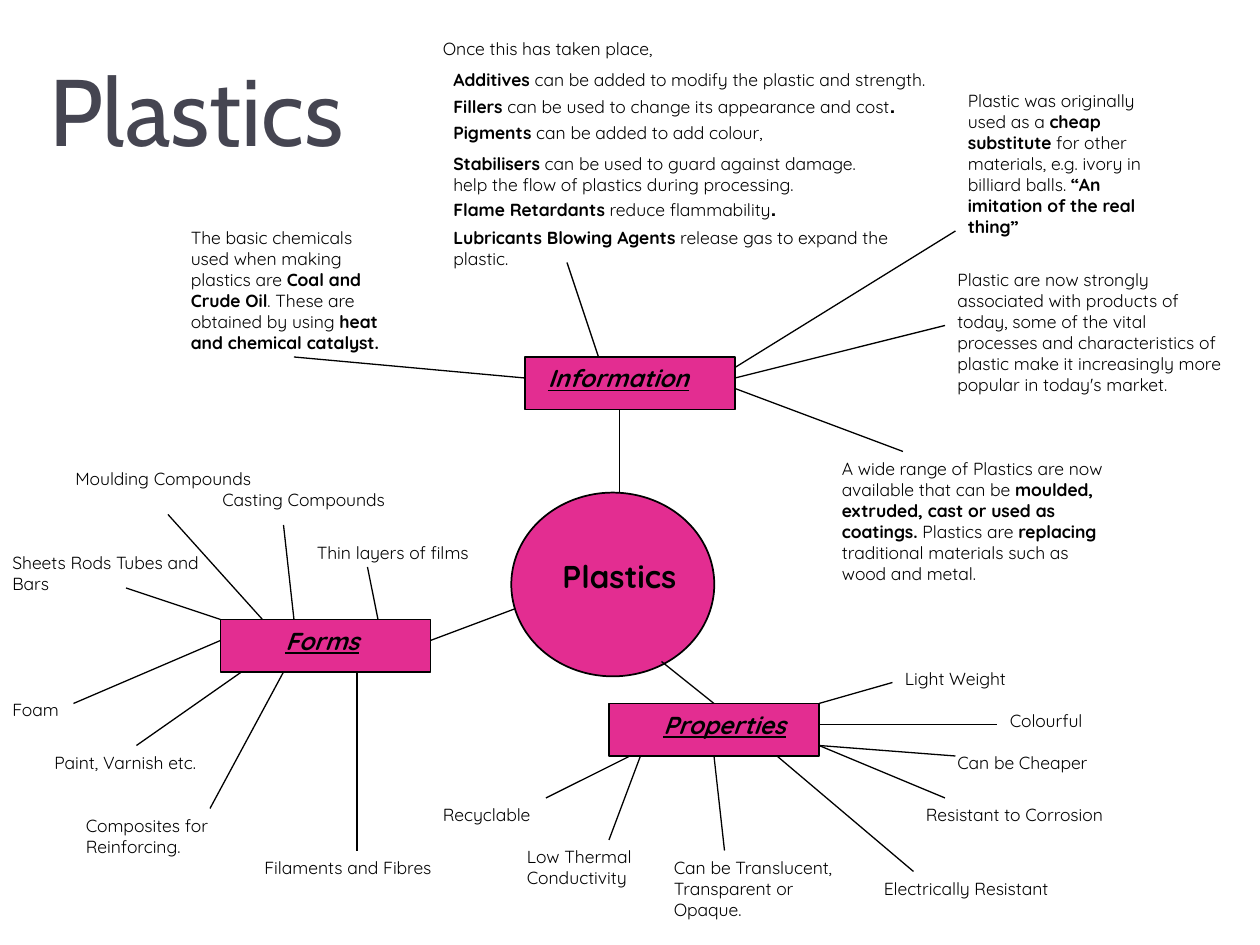
from pptx import Presentation
from pptx.dml.color import RGBColor
from pptx.enum.shapes import MSO_CONNECTOR, MSO_SHAPE
from pptx.enum.text import MSO_AUTO_SIZE, PP_ALIGN
from pptx.oxml.ns import qn
from pptx.util import Pt
from lxml import etree

PINK = RGBColor(0xE3, 0x2D, 0x91)
BLACK = RGBColor(0, 0, 0)
SLATE = RGBColor(0x45, 0x45, 0x51)

HUB_W, HUB_H = 120, 30
NOTE_W = 122.4

INFORMATION = [
    ("The basic chemicals used when making plastics are *Coal and Crude Oil*. "
     "These are obtained by using *heat and chemical catalyst.*",
     (-198, -78), NOTE_W, 7, (0, 12), (-132, 0)),
    ("Plastic are now strongly associated with products of today, some of the vital "
     "processes and characteristics of plastic make it increasingly more popular in today's market.",
     (240, -54), 168, 7, (120, 12), (240, -18)),
    ("Plastic was originally used as a *cheap substitute* for other materials, e.g. ivory in "
     "billiard balls. *“An imitation of the real thing”*",
     (246, -156), NOTE_W, 7, (120, 6), (246, -72)),
    ("A wide range of Plastics are now available that can be *moulded, extruded, cast or used "
     "as coatings.* Plastics are *replacing* traditional materials such as wood and metal.",
     (174, 54), 168, 6, (120, 18), (216, 54)),
]
FORMS = [
    ("Thin layers of films", (48, -48), NOTE_W, 1, (90, 0), (84, -30)),
    ("Casting Compounds", (-6, -78), NOTE_W, 1, (42, 0), (36, -54)),
    ("Moulding Compounds", (-90, -90), NOTE_W, 2, (24, 0), (-30, -60)),
    ("Sheets Rods Tubes and Bars", (-126, -42), NOTE_W, 2, (0, 0), (-54, -18)),
    ("Foam", (-126, 42), NOTE_W, 1, (0, 12), (-84, 48)),
    ("Paint, Varnish etc.", (-102, 72), NOTE_W, 1, (12, 30), (-48, 72)),
    ("Composites for Reinforcing.", (-84, 108), NOTE_W, 2, (36, 30), (-6, 108)),
    ("Filaments and Fibres", (18, 132), NOTE_W, 1, (78, 30), (78, 132)),
]
PROPERTIES = [
    ("Light Weight", (162, -24), NOTE_W, 1, (120, 0), (162, -12)),
    ("Colourful", (222, 0), NOTE_W, 1, (120, 12), (222, 12)),
    ("Can be Cheaper", (192, 24), NOTE_W, 1, (120, 24), (198, 30)),
    ("Resistant to Corrosion", (174, 54), NOTE_W, 1, (120, 24), (192, 54)),
    ("Electrically Resistant", (150, 96), NOTE_W, 1, (96, 30), (174, 96)),
    ("Can be Translucent, Transparent or Opaque.", (30, 84), NOTE_W, 3, (60, 30), (66, 84)),
    ("Low Thermal Conductivity", (-54, 78), NOTE_W, 2, (18, 30), (0, 78)),
    ("Recyclable", (-102, 54), NOTE_W, 1, (12, 30), (-36, 54)),
]
ADDITIVES = [
    ("Once this has taken place,", 0, 0, 144.7, 1, ""),
    ("*Additives* can be added to modify the plastic and strength.", 6, 18, 306, 1, ""),
    ("*Fillers* can be used to change its appearance and cost", 6, 25.5, 287.3, 1, "."),
    ("*Pigments* can be added to add colour,", 6, 48, 205.2, 1, ""),
    ("*Stabilisers* can be used to guard against damage.\n"
     "help the flow of plastics during processing.", 6, 66, 360, 2, ""),
    ("*Flame Retardants* reduce flammability", 6, 84, 203.8, 1, "."),
    ("*Lubricants Blowing Agents* release gas to expand the plastic.", 6, 108, 288, 2, ""),
]


def add_run(p, text, size=10, font="Quicksand", color=BLACK, bold=False, accent=False):
    """Append one formatted run; accent adds italics and underline."""
    r = p.add_run()
    r.text = text
    f = r.font
    f.size, f.name, f.bold = Pt(size), font, bold
    f.color.rgb = color
    if accent:
        f.italic = f.underline = True


def add_box(s, x, y, w, h):
    """Add a wrapping text box and return its text frame."""
    tf = s.shapes.add_textbox(Pt(x), Pt(y), Pt(w), Pt(h)).text_frame
    tf.word_wrap = True
    tf.auto_size = MSO_AUTO_SIZE.SHAPE_TO_FIT_TEXT
    return tf


def add_note(s, x, y, w, lines, text, stop=""):
    """Add a note whose *starred* parts are bold, with an optional large full stop."""
    tf = add_box(s, x, y, w, 32.4 - 3.6 if stop else 7.2 + 12 * lines)
    for i, line in enumerate(text.split("\n")):
        p = tf.add_paragraph() if i else tf.paragraphs[0]
        for j, part in enumerate(line.split("*")):
            if part:
                add_run(p, part, bold=j % 2 == 1)
    if stop:
        add_run(p, stop, 18, "Cabin")


def add_line(s, x, y, start, end, width=0.75):
    """Draw a black line between two offsets from x, y."""
    c = s.shapes.add_connector(MSO_CONNECTOR.STRAIGHT, Pt(x + start[0]), Pt(y + start[1]),
                               Pt(x + end[0]), Pt(y + end[1]))
    c.line.color.rgb = BLACK
    c.line.width = Pt(width)
    etree.SubElement(c._element.spPr, qn("a:effectLst"))


def add_pink(s, kind, x, y, w, h):
    """Add a pink shape with a black outline."""
    sp = s.shapes.add_shape(kind, Pt(x), Pt(y), Pt(w), Pt(h))
    sp.shadow.inherit = False
    sp.fill.solid()
    sp.fill.fore_color.rgb = PINK
    sp.line.color.rgb = BLACK
    sp.line.width = Pt(1)


def add_title(s, x, y, w, h):
    """Place the slide title."""
    add_run(add_box(s, x, y, w, h).paragraphs[0], "Plastics", 54, "Cabin", SLATE)


def add_centre(s, x, y, w, h):
    """Place the central circle with its label."""
    add_pink(s, MSO_SHAPE.OVAL, x, y, w, h)
    p = add_box(s, x + 1.5, y + 42.5, w + 4.5, 18).paragraphs[0]
    p.alignment = PP_ALIGN.CENTER
    p.line_spacing = 0.5
    add_run(p, "Plastics", 18, bold=True)


def add_branch(s, x, y, name, label, align, trunk, leaves):
    """Place a hub at x, y with its label, trunk line and surrounding notes."""
    add_line(s, x, y, *trunk)
    add_pink(s, MSO_SHAPE.RECTANGLE, x, y, HUB_W, HUB_H)
    dx, w = label
    p = add_box(s, x + dx, y, w, 24).paragraphs[0]
    p.alignment = align
    add_run(p, name, 14, bold=True, accent=True)
    for text, (left, top), width, lines, start, end in leaves:
        add_note(s, x + left, y + top, width, lines, text)
        add_line(s, x, y, start, end)


def add_additives(s, x, y):
    """Place the list of additives and the line to its hub."""
    for text, dx, dy, w, lines, stop in ADDITIVES:
        add_note(s, x + dx, y + dy, w, lines, text, stop)
    add_line(s, x, y, (96, 186), (78, 132))


def main():
    """Build the mind map slide."""
    prs = Presentation()
    prs.slide_width, prs.slide_height = Pt(720), Pt(540)
    s = prs.slides.add_slide(prs.slide_layouts[6])
    add_centre(s, 292.2, 281.5, 116, 105)
    add_title(s, 21, 26, 195, 72.7)
    add_branch(s, 300, 204, "Information", (6, NOTE_W), PP_ALIGN.LEFT,
               ((54, 77.5), (54, 30), 1), INFORMATION)
    add_branch(s, 348, 402, "Properties", (0, 132), PP_ALIGN.CENTER,
               ((30, -24), (60, 0)), PROPERTIES)
    add_branch(s, 126, 354, "Forms", (30, 132), PP_ALIGN.LEFT,
               ((120, 12), (168, -6)), FORMS)
    add_additives(s, 246, 18)
    prs.save("out.pptx")


if __name__ == "__main__":
    main()
